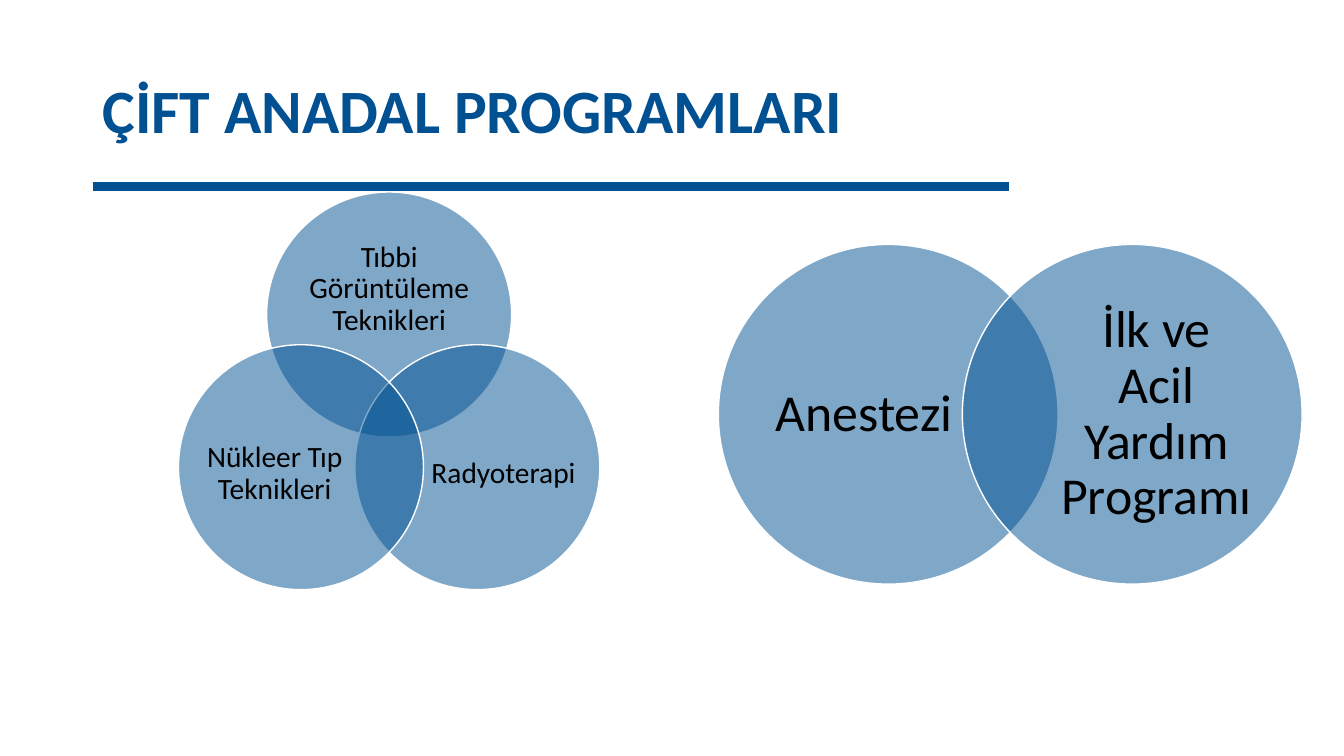
from math import cos, radians, sin

from lxml import etree
from pptx import Presentation
from pptx.dml.color import RGBColor
from pptx.enum.shapes import MSO_CONNECTOR, MSO_SHAPE
from pptx.enum.text import MSO_ANCHOR, PP_ALIGN
from pptx.oxml.ns import qn
from pptx.util import Inches, Pt

STRAIGHT, OVAL = MSO_CONNECTOR.STRAIGHT, MSO_SHAPE.OVAL
MIDDLE, LEFT, CENTER = MSO_ANCHOR.MIDDLE, PP_ALIGN.LEFT, PP_ALIGN.CENTER

# Content
COLORS = {"blue": "015092", "white": "FFFFFF", "black": "000000"}
FONT = "Calibri"
TITLE = "ÇİFT ANADAL PROGRAMLARI"
# Circles sit on a ring around the hub; each has an angle in degrees,
# a label, the label's shift from the circle centre and the label size.
VENNS = [
    {"hub": (3.86, 4.13), "ring": 1.01, "diameter": 2.43, "size": 21, "circles": [
        (-90, "Tıbbi Görüntüleme Teknikleri", (0, -0.25), (1.78, 1.09)),
        (30, "Radyoterapi", (0.26, 0.07), (1.46, 1.33)),
        (150, "Nükleer Tıp Teknikleri", (-0.26, 0.07), (1.46, 1.33)),
    ]},
    {"hub": (10.02, 4.11), "ring": 1.21, "diameter": 3.37, "size": 37, "circles": [
        (180, "Anestezi", (-0.24, 0), (1.94, 2.57)),
        (0, "İlk ve Acil Yardım Programı", (0.24, 0), (1.94, 2.57)),
    ]},
]


def color(name):
    return RGBColor.from_string(COLORS[name])


def add_text(shapes, box, text, size, color_name, align, bold=False, insets=(0, 0)):
    frame = shapes.add_textbox(*map(Inches, box)).text_frame
    frame.word_wrap = True
    frame.vertical_anchor = MIDDLE
    frame.margin_left = frame.margin_right = Inches(insets[0])
    frame.margin_top = frame.margin_bottom = Inches(insets[1])
    frame.text = text
    paragraph = frame.paragraphs[0]
    paragraph.alignment = align
    paragraph.line_spacing = 0.9
    font = paragraph.runs[0].font
    font.name, font.size, font.bold = FONT, Pt(size), bold
    font.color.rgb = color(color_name)


def add_circle(shapes, x, y, diameter):
    left, top = x - diameter / 2, y - diameter / 2
    circle = shapes.add_shape(OVAL, *map(Inches, (left, top, diameter, diameter)))
    circle.shadow.inherit = False
    circle.fill.solid()
    circle.fill.fore_color.rgb = color("blue")
    fill_color = circle.fill._xPr.find(qn("a:solidFill"))[0]
    etree.SubElement(fill_color, qn("a:alpha")).set("val", "50000")
    circle.line.color.rgb = color("white")
    circle.line.width = Pt(1)


def add_venn(slide, venn):
    shapes = slide.shapes.add_group_shape().shapes
    for angle, label, shift, (width, height) in venn["circles"]:
        x = venn["hub"][0] + venn["ring"] * cos(radians(angle))
        y = venn["hub"][1] + venn["ring"] * sin(radians(angle))
        add_circle(shapes, x, y, venn["diameter"])
        box = (x + shift[0] - width / 2, y + shift[1] - height / 2, width, height)
        add_text(shapes, box, label, venn["size"], "black", CENTER)


def main():
    presentation = Presentation()
    presentation.slide_width = Inches(13.33)
    presentation.slide_height = Inches(7.5)
    slide = presentation.slides.add_slide(presentation.slide_layouts[6])

    # Title and rule
    rule = slide.shapes.add_connector(
        STRAIGHT, Inches(0.92), Inches(1.85), Inches(10.01), Inches(1.85))
    rule.line.color.rgb = color("blue")
    rule.line.width = Pt(6)
    etree.SubElement(rule._element.spPr, qn("a:effectLst"))
    add_text(slide.shapes, (0.92, 0.4, 9.1, 1.45), TITLE, 44, "blue", LEFT,
             bold=True, insets=(0.1, 0.05))

    # Venn diagrams
    for venn in VENNS:
        add_venn(slide, venn)

    presentation.save("out.pptx")


if __name__ == "__main__":
    main()
